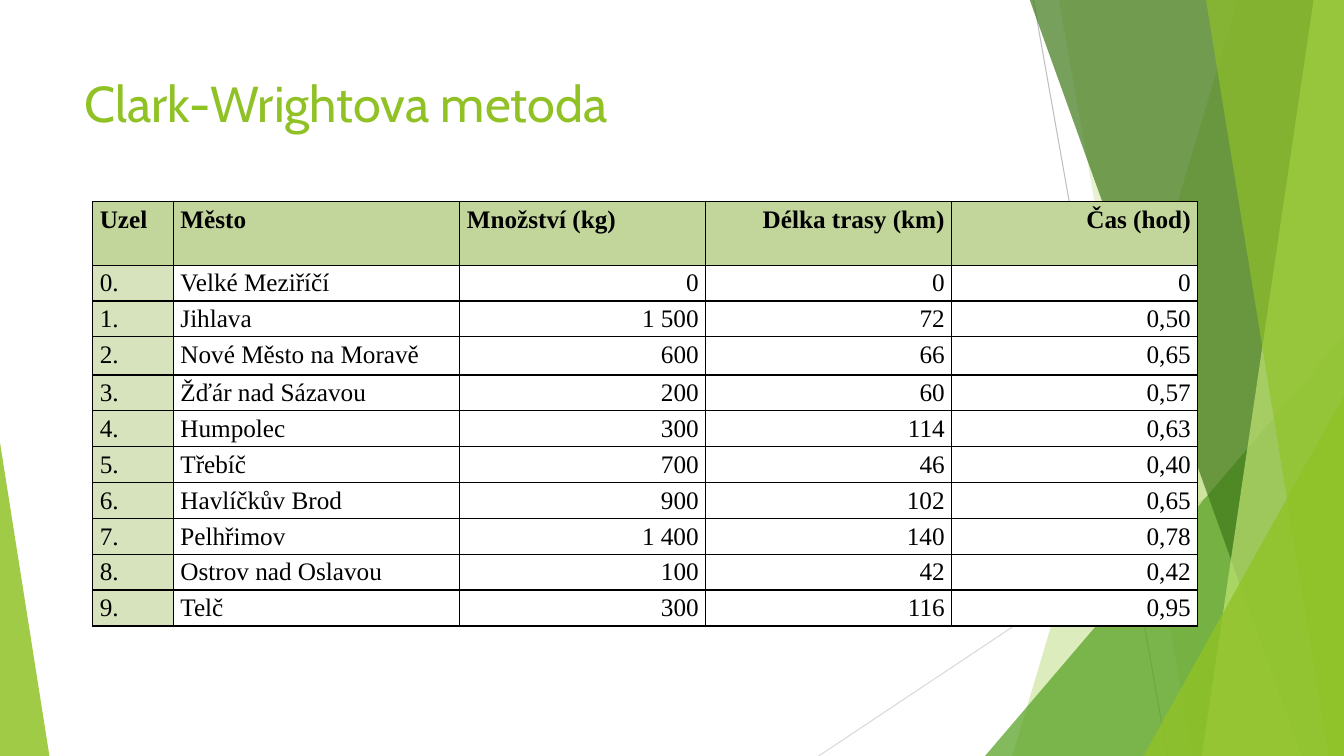
import pptx
import pptx.util
import pptx.oxml
import pptx.oxml.ns
import pptx.dml.color
import pptx.enum.shapes
import pptx.enum.text
from dataclasses import dataclass

Inches = pptx.util.Inches
Pt = pptx.util.Pt
SHAPE = pptx.enum.shapes.MSO_SHAPE
ALIGN = pptx.enum.text.PP_ALIGN
NS = pptx.oxml.ns.nsdecls("a")


@dataclass
class Theme:
    """Colours, fonts and type sizes."""
    lime: str = "90C226"
    green: str = "54A021"
    forest: str = "3F7819"
    pale: str = "C0E474"
    grey: str = "BFBFBF"
    light_grey: str = "D9D9D9"
    header: str = "C2D69B"
    node: str = "D6E3BC"
    white: str = "FFFFFF"
    black: str = "000000"
    title_font: str = "Cabin"
    table_font: str = "Times New Roman"
    title_size: float = 36
    table_size: float = 18
    hairline: float = 0.75
    border: float = 1


def rgb(color):
    """Turn a hex string into a colour."""
    return pptx.dml.color.RGBColor.from_string(color)


def assign(target, values):
    """Set each named attribute on the target."""
    for name, value in values.items():
        setattr(target, name, value)


class Deck:
    """Draws styled elements on the current slide."""

    def __init__(self, prs, theme):
        """Keep the theme and open a blank slide."""
        self.theme = theme
        self.s = prs.slides.add_slide(prs.slide_layouts[6])

    def line(self, start, end, color):
        """Draw a thin straight line."""
        points = [Inches(v) for v in (*start, *end)]
        c = self.s.shapes.add_connector(pptx.enum.shapes.MSO_CONNECTOR.STRAIGHT, *points)
        c.line.color.rgb = rgb(color)
        c.line.width = Pt(self.theme.hairline)
        c._element.spPr.append(pptx.oxml.parse_xml(f"<a:effectLst {NS}/>"))

    def paint(self, sp, color, opacity):
        """Give a shape a see-through fill and no outline."""
        sp.shadow.inherit = False
        sp.line.fill.background()
        sp.fill.solid()
        sp.fill.fore_color.rgb = rgb(color)
        clr = sp._element.spPr.find(".//" + pptx.oxml.ns.qn("a:srgbClr"))
        clr.append(pptx.oxml.parse_xml(f'<a:alpha {NS} val="{opacity * 1000}"/>'))

    def shard(self, points, color, opacity):
        """Draw a closed polygon."""
        start, *rest = [(Inches(x), Inches(y)) for x, y in points]
        builder = self.s.shapes.build_freeform(*start, scale=1.0)
        builder.add_line_segments(rest, close=True)
        self.paint(builder.convert_to_shape(), color, opacity)

    def triangle(self, box, apex, color, opacity):
        """Draw a triangle with its apex at a share of its width."""
        sp = self.s.shapes.add_shape(SHAPE.ISOSCELES_TRIANGLE, *map(Inches, box))
        sp.adjustments[0] = apex
        self.paint(sp, color, opacity)

    def add_text(self, tf, text, para, font, color):
        """Put one formatted run in a text frame."""
        p = tf.paragraphs[0]
        assign(p, para)
        r = p.add_run()
        r.text = text
        assign(r.font, font)
        r.font.color.rgb = rgb(color)

    def title(self, box, text):
        """Add the slide title."""
        t = self.theme
        tf = self.s.shapes.add_textbox(*map(Inches, box)).text_frame
        assign(tf, {"word_wrap": True, "vertical_anchor": pptx.enum.text.MSO_ANCHOR.TOP})
        font = {"name": t.title_font, "size": Pt(t.title_size)}
        self.add_text(tf, text, {"alignment": ALIGN.LEFT}, font, t.lime)

    def cell(self, cell, text, align, bold, fill):
        """Fill, frame and label one table cell."""
        t = self.theme
        assign(cell, {"margin_left": Inches(0.07), "margin_right": Inches(0.07),
                      "margin_top": 0, "margin_bottom": 0})
        for side in "LRTB":
            cell._tc.get_or_add_tcPr().append(pptx.oxml.parse_xml(
                f'<a:ln{side} {NS} w="{Pt(t.border)}"><a:solidFill>'
                f'<a:srgbClr val="{t.black}"/></a:solidFill></a:ln{side}>'))
        cell.fill.solid()
        cell.fill.fore_color.rgb = rgb(fill)
        font = {"name": t.table_font, "size": Pt(t.table_size), "bold": bold}
        self.add_text(cell.text_frame, text, {"alignment": align, "line_spacing": 1.15},
                      font, t.black)

    def table(self, box, widths, heights, rows):
        """Add a table with a header row and a shaded first column."""
        t = self.theme
        tbl = self.s.shapes.add_table(len(rows), len(widths), *map(Inches, box)).table
        assign(tbl, {"first_row": False, "horz_banding": False})
        for col, width in zip(tbl.columns, widths):
            col.width = Inches(width)
        for i, (height, row) in enumerate(zip(heights, rows)):
            tbl.rows[i].height = Inches(height)
            for j, text in enumerate(row):
                right = j > 2 or (j == 2 and i > 0)
                fill = t.header if i == 0 else t.node if j == 0 else t.white
                self.cell(tbl.cell(i, j), text, ALIGN.RIGHT if right else ALIGN.LEFT,
                          i == 0, fill)


HEADER = ("Uzel", "Město", "Množství (kg)", "Délka trasy (km)", "Čas (hod)")
STOPS = [
    ("Velké Meziříčí", "0", "0", "0"),
    ("Jihlava", "1 500", "72", "0,50"),
    ("Nové Město na Moravě", "600", "66", "0,65"),
    ("Žďár nad Sázavou", "200", "60", "0,57"),
    ("Humpolec", "300", "114", "0,63"),
    ("Třebíč", "700", "46", "0,40"),
    ("Havlíčkův Brod", "900", "102", "0,65"),
    ("Pelhřimov", "1 400", "140", "0,78"),
    ("Ostrov nad Oslavou", "100", "42", "0,42"),
    ("Telč", "300", "116", "0,95"),
]


def main():
    """Build and save the slide."""
    prs = pptx.Presentation()
    width, height, top = 13.33, 7.5, -0.01
    assign(prs, {"slide_width": Inches(width), "slide_height": Inches(height)})
    t = Theme()
    deck = Deck(prs, t)

    def edge_shard(top_x, bottom_x, color, opacity):
        """Draw a polygon from a slanted side to the right slide edge."""
        deck.shard([(top_x, top), (width, top), (width, height), (bottom_x, height)],
                   color, opacity)

    deck.line((10.25, 0), (11.58, height), t.grey)
    deck.line((width, 4.03), (8.12, height), t.light_grey)
    edge_shard(12.28, 10.04, t.lime, 30)
    edge_shard(10.5, 11.83, t.lime, 20)
    deck.triangle((9.77, 3.33, 3.56, 4.17), 1, t.green, 72)
    edge_shard(10.21, 12.91, t.forest, 70)
    edge_shard(13.03, 11.92, t.pale, 70)
    edge_shard(11.96, 13.18, t.lime, 65)
    deck.triangle((11.34, 3.93, 1.99, 3.57), 1, t.lime, 80)
    deck.triangle((0, 4.39, 0.49, 3.11), 0, t.lime, 85)

    deck.title((0.74, 0.67, 9.4, 1.44), "Clark-Wrightova metoda")

    table_height, header_height, tall = 4.21, 0.63, 0.38
    regular = (table_height - header_height - tall) / (len(STOPS) - 1)
    heights = [header_height] + [regular] * len(STOPS)
    heights[3] = tall
    rows = [HEADER] + [(f"{n}.", *stop) for n, stop in enumerate(STOPS)]
    deck.table((0.92, 2, 10.95, table_height), [0.8, 2.84] + [2.44] * 3, heights, rows)
    prs.save("out.pptx")


if __name__ == "__main__":
    main()
